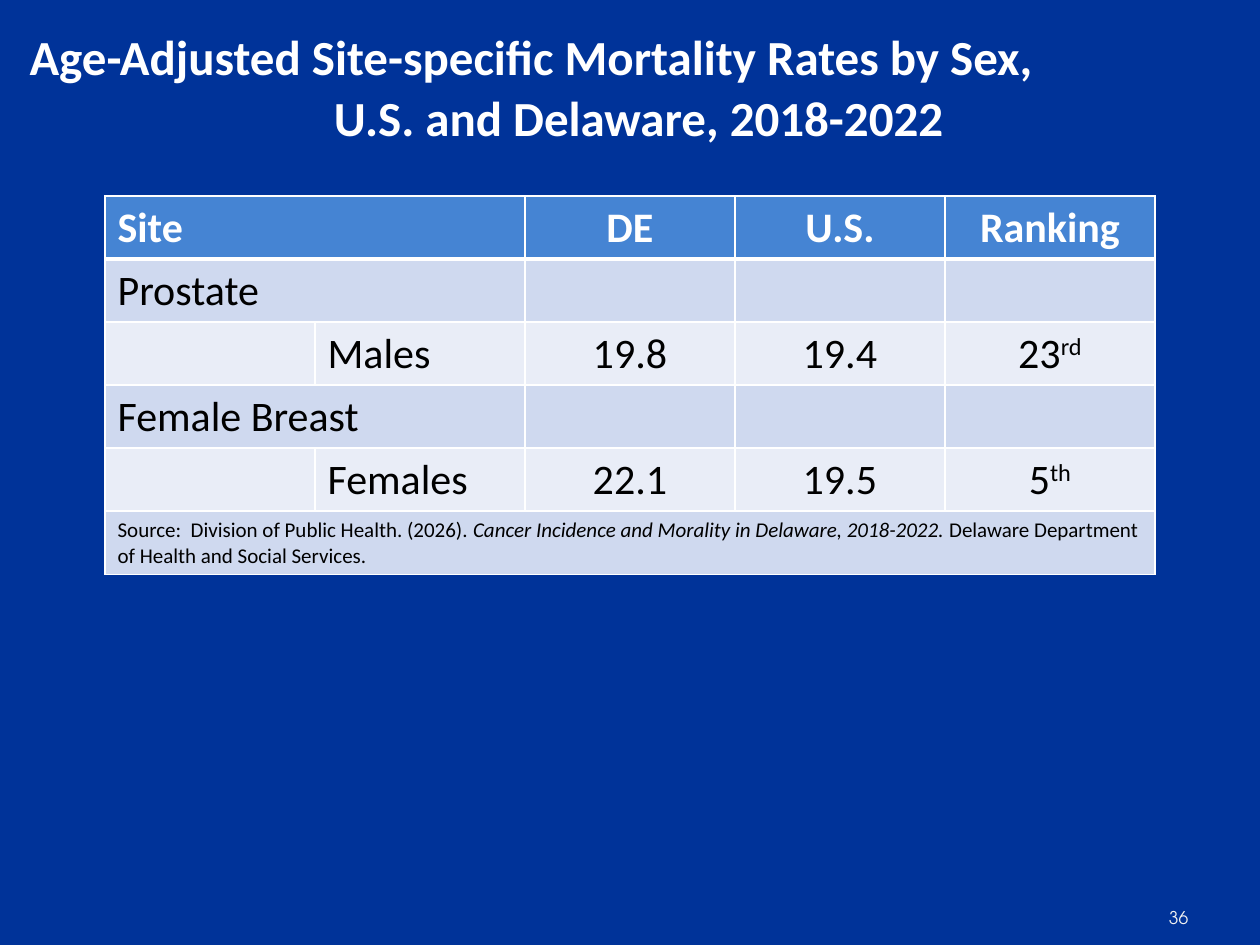
import dataclasses
import typing

import pptx
import pptx.dml.color
import pptx.enum.text
import pptx.oxml.ns
import pptx.util
from lxml import etree

EMU_PER_PX = 914400 / 126
COLUMN_WIDTH = 210
ROW_HEIGHT = 63
COLORS = {
    "background": "003399",
    "white": "FFFFFF",
    "black": "000000",
    "page": "F2F2F2",
    "header": "4584D3",
    "group": "CFD9EF",
    "detail": "E9EDF7",
}
LEFT = pptx.enum.text.PP_ALIGN.LEFT
CENTER = pptx.enum.text.PP_ALIGN.CENTER
MIDDLE = pptx.enum.text.MSO_ANCHOR.MIDDLE


@dataclasses.dataclass
class Entry:
    text: str
    align: typing.Any = CENTER
    superscript: str = ""


@dataclasses.dataclass
class Row:
    fill: str
    entries: dict[int, Entry]
    merged_columns: int = 1
    size: int = 24
    color: str = "black"
    bold: bool = False


ROWS = [
    Row("header", {0: Entry("Site", LEFT), 2: Entry("DE"), 3: Entry("U.S."),
                   4: Entry("Ranking")}, 2, color="white", bold=True),
    Row("group", {0: Entry("Prostate", LEFT)}, 2),
    Row("detail", {1: Entry("Males", LEFT), 2: Entry("19.8"), 3: Entry("19.4"),
                   4: Entry("23", superscript="rd")}),
    Row("group", {0: Entry("Female Breast", LEFT)}, 2),
    Row("detail", {1: Entry("Females", LEFT), 2: Entry("22.1"), 3: Entry("19.5"),
                   4: Entry("5", superscript="th")}),
    Row("group", {0: Entry("Source:  Division of Public Health. (2026).", LEFT)}, 5, size=12),
]


def px(length: int) -> pptx.util.Emu:
    return pptx.util.Emu(round(length * EMU_PER_PX))


def rgb(name: str) -> pptx.dml.color.RGBColor:
    return pptx.dml.color.RGBColor.from_string(COLORS[name])


def add_text(paragraph, text: str, *, size: int, color: str, font: str = "Calibri",
             bold: bool = False, italic: bool = False, superscript: bool = False,
             align=None) -> None:
    if align is not None:
        paragraph.alignment = align
    run = paragraph.add_run()
    run.text = text
    run.font.name = font
    run.font.size = pptx.util.Pt(size)
    run.font.bold = bold
    run.font.italic = italic
    run.font.color.rgb = rgb(color)
    if superscript:
        run._r.get_or_add_rPr().set("baseline", "30000")


def place(shape, left: int, top: int, width: int, height: int) -> None:
    shape.left, shape.top = px(left), px(top)
    shape.width, shape.height = px(width), px(height)


def set_borders(cell, row_index: int) -> None:
    widths = {"lnL": 1, "lnR": 1,
              "lnT": 3 if row_index == 1 else 1,
              "lnB": 3 if row_index == 0 else 1}
    properties = cell._tc.get_or_add_tcPr()
    for position, (side, width) in enumerate(widths.items()):
        line = etree.Element(pptx.oxml.ns.qn(f"a:{side}"), w=str(pptx.util.Pt(width)))
        solid = etree.SubElement(line, pptx.oxml.ns.qn("a:solidFill"))
        etree.SubElement(solid, pptx.oxml.ns.qn("a:srgbClr"), val=COLORS["white"])
        properties.insert(position, line)


def add_title(slide) -> None:
    title = slide.shapes.title
    place(title, 0, 1, 1260, 168)
    frame = title.text_frame
    frame.word_wrap = True
    frame.auto_size = pptx.enum.text.MSO_AUTO_SIZE.NONE
    frame.vertical_anchor = MIDDLE
    topic, period = frame.paragraphs[0], frame.add_paragraph()
    for paragraph in (topic, period):
        paragraph.line_spacing = pptx.util.Pt(35)
    topic._p.get_or_add_pPr().set("marL", str(px(17)))
    add_text(topic, "Age-Adjusted Site-specific Mortality Rates by Sex,",
             size=28, color="white", bold=True, align=LEFT)
    add_text(period, "U.S. and Delaware, 2018-2022",
             size=28, color="white", bold=True, align=CENTER)


def add_page_number(slide) -> None:
    page = slide.shapes.add_textbox(px(1165), px(893), px(77), px(50))
    frame = page.text_frame
    frame.word_wrap = True
    frame.vertical_anchor = MIDDLE
    frame.margin_left = px(4)
    frame.margin_right = frame.margin_top = frame.margin_bottom = px(6)
    add_text(frame.paragraphs[0], "36", size=10, color="page", font="TeX Gyre Adventor")


def add_rates_table(slide) -> None:
    rates = slide.shapes.add_table(len(ROWS), 5, px(105), px(196), px(5 * COLUMN_WIDTH),
                                   px(len(ROWS) * ROW_HEIGHT)).table
    rates.horz_banding = False
    for column in rates.columns:
        column.width = px(COLUMN_WIDTH)
    for row_index, row in enumerate(ROWS):
        rates.rows[row_index].height = px(ROW_HEIGHT)
        for column_index in range(5):
            cell = rates.cell(row_index, column_index)
            cell.fill.solid()
            cell.fill.fore_color.rgb = rgb(row.fill)
            set_borders(cell, row_index)
        if row.merged_columns > 1:
            rates.cell(row_index, 0).merge(rates.cell(row_index, row.merged_columns - 1))
        for column_index, entry in row.entries.items():
            paragraph = rates.cell(row_index, column_index).text_frame.paragraphs[0]
            add_text(paragraph, entry.text, size=row.size, color=row.color,
                     bold=row.bold, align=entry.align)
            if entry.superscript:
                add_text(paragraph, entry.superscript, size=row.size, color=row.color,
                         superscript=True)
    citation = rates.cell(len(ROWS) - 1, 0).text_frame.paragraphs[0]
    add_text(citation, " Cancer Incidence and Morality in Delaware, 2018-2022. ",
             size=12, color="black", italic=True)
    add_text(citation, "Delaware Department of Health and Social Services.",
             size=12, color="black")


def main() -> None:
    presentation = pptx.Presentation()
    presentation.slide_width, presentation.slide_height = px(1260), px(945)
    slide = presentation.slides.add_slide(presentation.slide_layouts[5])
    slide.background.fill.solid()
    slide.background.fill.fore_color.rgb = rgb("background")
    add_title(slide)
    add_page_number(slide)
    add_rates_table(slide)
    presentation.save("out.pptx")


if __name__ == "__main__":
    main()
